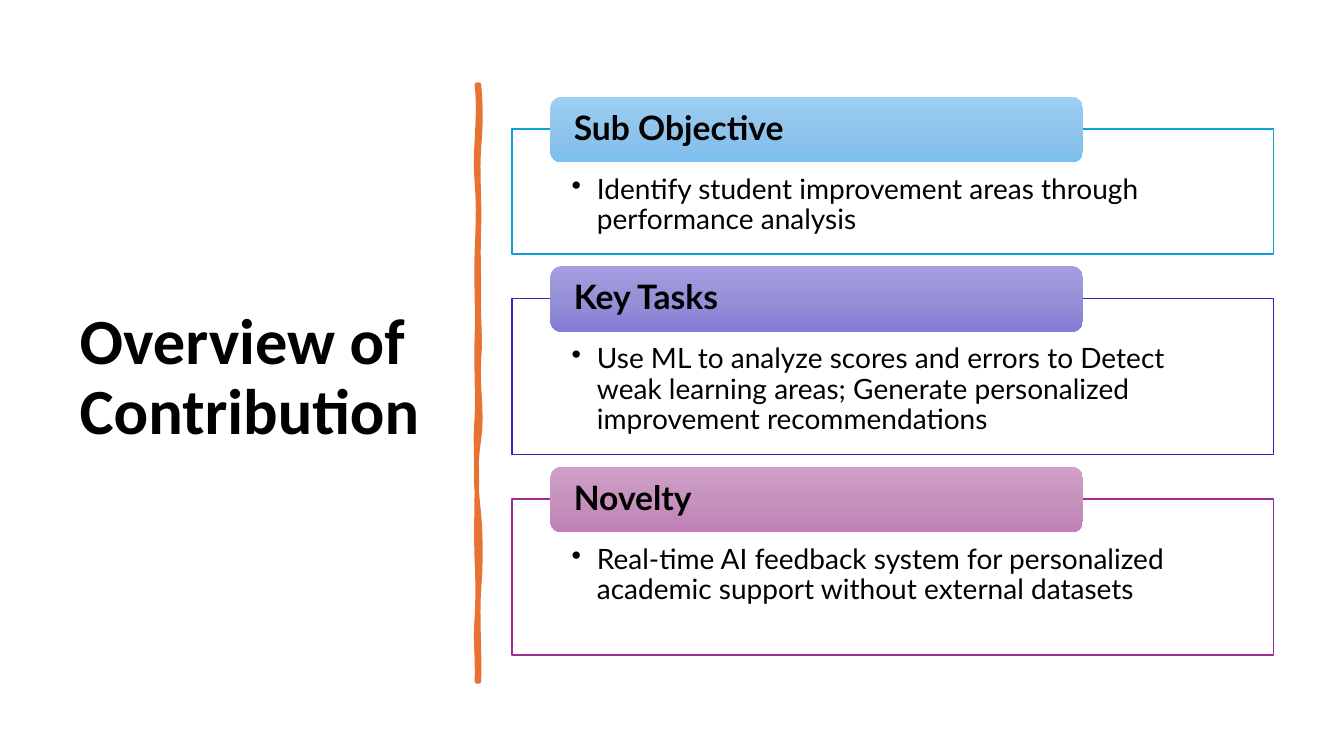
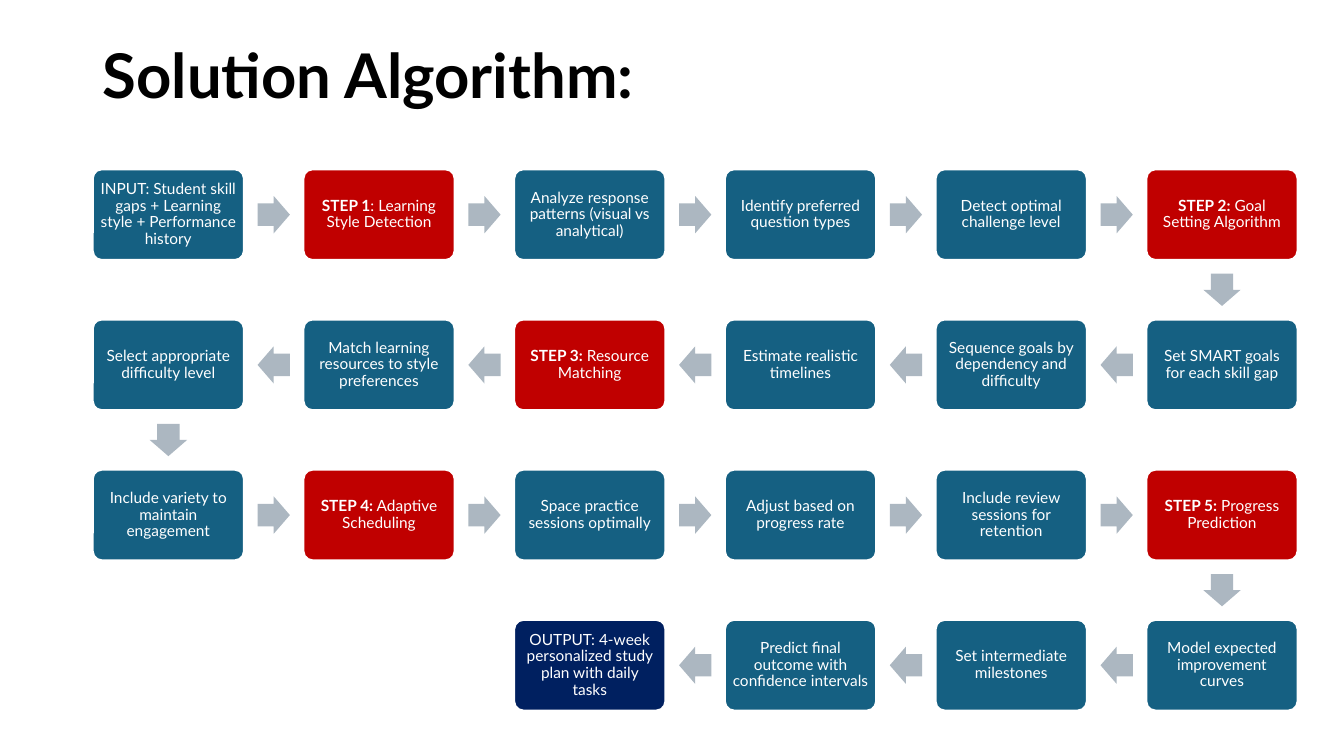
from copy import deepcopy

from pptx import Presentation
from pptx.dml.color import RGBColor
from pptx.enum.shapes import MSO_SHAPE
from pptx.enum.text import MSO_ANCHOR, MSO_AUTO_SIZE, PP_ALIGN
from pptx.oxml.ns import qn
from pptx.oxml.xmlchemy import OxmlElement
from pptx.util import Inches, Pt

RECT, ROUND_RECT = MSO_SHAPE.RECTANGLE, MSO_SHAPE.ROUNDED_RECTANGLE
RIGHT_ARROW = MSO_SHAPE.RIGHT_ARROW
TOP, MIDDLE = MSO_ANCHOR.TOP, MSO_ANCHOR.MIDDLE
LEFT, CENTER = PP_ALIGN.LEFT, PP_ALIGN.CENTER
NO_AUTOFIT = MSO_AUTO_SIZE.NONE

BLACK = RGBColor(0x00, 0x00, 0x00)
WHITE = RGBColor(0xFF, 0xFF, 0xFF)
ORANGE = RGBColor(0xE9, 0x71, 0x32)
TEAL = RGBColor(0x15, 0x60, 0x82)
RED = RGBColor(0xC0, 0x00, 0x00)
NAVY = RGBColor(0x00, 0x20, 0x60)
ARROW_GREY = RGBColor(0xAC, 0xB7, 0xC1)
SKY = [RGBColor.from_string(c) for c in ("0F9ED5", "9ECFF5", "90C4EB", "7CBEED")]
VIOLET = [RGBColor.from_string(c) for c in ("3C1EBA", "A39EE1", "9791D7", "837DD6")]
MAUVE = [RGBColor.from_string(c) for c in ("A02B93", "D0A0C8", "C693BD", "C17FB6")]

BODY_FONT, TITLE_FONT = "Lato", "Calibri"
LINE_SPACING = 0.9

# Heading, bullet, panel height, colours (border, then three tab shades)
CONTRIBUTIONS = [
    ("Sub Objective",
     "Identify student improvement areas through performance analysis", 1.24, SKY),
    ("Key Tasks",
     "Use ML to analyze scores and errors to Detect weak learning areas; "
     "Generate personalized improvement recommendations", 1.55, VIOLET),
    ("Novelty",
     "Real-time AI feedback system for personalized academic support "
     "without external datasets", 1.55, MAUVE),
]

# Steps in reading order: bold lead, remaining text, fill
ALGORITHM = [
    ("", "INPUT: Student skill gaps + Learning style + Performance history", TEAL),
    ("STEP 1", ": Learning Style Detection", RED),
    ("", "Analyze response patterns (visual vs analytical)", TEAL),
    ("", "Identify preferred question types", TEAL),
    ("", "Detect optimal challenge level", TEAL),
    ("STEP 2:", " Goal Setting Algorithm", RED),
    ("", "Set SMART goals for each skill gap", TEAL),
    ("", "Sequence goals by dependency and difficulty", TEAL),
    ("", "Estimate realistic timelines", TEAL),
    ("STEP 3:", " Resource Matching", RED),
    ("", "Match learning resources to style preferences", TEAL),
    ("", "Select appropriate difficulty level", TEAL),
    ("", "Include variety to maintain engagement", TEAL),
    ("STEP 4:", " Adaptive Scheduling", RED),
    ("", "Space practice sessions optimally", TEAL),
    ("", "Adjust based on progress rate", TEAL),
    ("", "Include review sessions for retention", TEAL),
    ("STEP 5:", " Progress Prediction", RED),
    ("", "Model expected improvement curves", TEAL),
    ("", "Set intermediate milestones", TEAL),
    ("", "Predict final outcome with confidence intervals", TEAL),
    ("", "OUTPUT: 4-week personalized study plan with daily tasks", NAVY),
]

# Hand-drawn divider: each curve is (control x, control x, end y)
DIVIDER_TOP, DIVIDER_LEFT, DIVIDER_RIGHT = 0.84, 4.73, 4.75
RIGHT_EDGE = [
    (4.77, 4.77, 1.46), (4.73, 4.76, 2.26), (4.74, 4.75, 2.94), (4.74, 4.77, 3.56),
    (4.73, 4.79, 4.36), (4.71, 4.72, 5.1), (4.77, 4.77, 5.84), (4.73, 4.76, 6.76),
]
LEFT_EDGE = [
    (4.74, 4.71, 6.13), (4.74, 4.74, 5.57), (4.72, 4.73, 4.77), (4.73, 4.71, 4.15),
    (4.74, 4.72, 3.35), (4.74, 4.72, 2.5), (4.74, 4.75, 1.81), (4.7, 4.77, 0.84),
]

PANEL_LEFT, PANEL_TOP, PANEL_WIDTH, PANEL_GAP = 5.08, 1.28, 7.55, 0.44
TAB_INDENT, TAB_RISE, TAB_WIDTH, TAB_HEIGHT = 0.38, 0.32, 5.28, 0.65

COLUMNS, STEP_WIDTH, STEP_HEIGHT = 6, 1.5, 0.9
FIRST_X, FIRST_Y, PITCH_X, PITCH_Y = 1.67, 2.13, 2.09, 1.49
ARROW_WIDTH, ARROW_HEIGHT = 0.32, 0.37


def add_title(slide, text, box, size, font, anchor):
    title = slide.shapes.title
    title.left, title.top, title.width, title.height = map(Inches, box)
    frame = title.text_frame
    frame.auto_size, frame.vertical_anchor = NO_AUTOFIT, anchor
    write(frame, [(text, True)], size, BLACK, LEFT, font)


def write(frame, runs, size, color, align=LEFT, font=BODY_FONT):
    """Fill the first paragraph with (text, bold) runs."""
    frame.word_wrap = True
    paragraph = frame.paragraphs[0]
    paragraph.alignment, paragraph.line_spacing = align, LINE_SPACING
    for text, bold in runs:
        run = paragraph.add_run()
        run.text = text
        run.font.name, run.font.size, run.font.bold = font, Pt(size), bold
        run.font.color.rgb = color
    return paragraph


def add_block(slide, kind, box, fill=None, border=None, border_width=1.0):
    block = slide.shapes.add_shape(kind, *map(Inches, box))
    block.shadow.inherit = False
    if fill is not None:
        block.fill.solid()
        block.fill.fore_color.rgb = fill
    if border is None:
        block.line.fill.background()
    else:
        block.line.color.rgb = border
        block.line.width = Pt(border_width)
    return block


def set_insets(frame, left, top, right, bottom):
    frame.margin_left, frame.margin_top = Inches(left), Inches(top)
    frame.margin_right, frame.margin_bottom = Inches(right), Inches(bottom)


def add_bullet(paragraph, indent):
    properties = paragraph._p.get_or_add_pPr()
    properties.set("marL", str(Inches(indent)))
    properties.set("indent", str(-Inches(indent)))
    bullet = OxmlElement("a:buChar")
    bullet.set("char", "•")
    properties.append(bullet)


def shade_downwards(block, colors):
    block.fill.gradient()
    stop_list = block._element.spPr.find(".//" + qn("a:gsLst"))
    stop_list.insert(1, deepcopy(stop_list[0]))
    block.fill.gradient_angle = 270
    for position, (stop, color) in enumerate(zip(block.fill.gradient_stops, colors)):
        stop.position = position / 2
        stop.color.rgb = color


def curve_points(start_x, start_y, curves, samples=8):
    """Sample cubic curves whose ends all lie at start_x."""
    points = []
    for control_1, control_2, end_y in curves:
        for i in range(1, samples + 1):
            t = i / samples
            x = (start_x + 3 * t * (1 - t) ** 2 * (control_1 - start_x)
                 + 3 * t ** 2 * (1 - t) * (control_2 - start_x))
            points.append((Inches(x), Inches(start_y + t * (end_y - start_y))))
        start_y = end_y
    return points


def add_divider(slide):
    bottom = RIGHT_EDGE[-1][-1]
    builder = slide.shapes.build_freeform(Inches(DIVIDER_RIGHT), Inches(DIVIDER_TOP))
    builder.add_line_segments(
        curve_points(DIVIDER_RIGHT, DIVIDER_TOP, RIGHT_EDGE)
        + [(Inches(DIVIDER_LEFT), Inches(bottom))]
        + curve_points(DIVIDER_LEFT, bottom, LEFT_EDGE), close=True)
    divider = builder.convert_to_shape()
    divider.shadow.inherit = False
    divider.fill.solid()
    divider.fill.fore_color.rgb = ORANGE
    divider.line.color.rgb = ORANGE
    divider.line.width = Pt(3.25)
    divider.line._get_or_add_ln().append(OxmlElement("a:round"))


def add_contribution(slide, top, heading, detail, height, colors):
    border, *shades = colors
    panel = add_block(slide, RECT, (PANEL_LEFT, top, PANEL_WIDTH, height), WHITE, border)
    panel.text_frame.vertical_anchor = TOP
    set_insets(panel.text_frame, 0.59, 0.46, 0.59, 0.16)
    add_bullet(write(panel.text_frame, [(detail, False)], 20, BLACK), 0.25)

    tab = add_block(slide, ROUND_RECT, (PANEL_LEFT + TAB_INDENT, top - TAB_RISE,
                                        TAB_WIDTH, TAB_HEIGHT))
    shade_downwards(tab, shades)
    tab.text_frame.vertical_anchor = MIDDLE
    set_insets(tab.text_frame, 0.2, 0, 0.2, 0)
    write(tab.text_frame, [(heading, True)], 24, BLACK)


def centred(x, y, width, height):
    return x - width / 2, y - height / 2, width, height


def step_centre(index):
    """Rows run alternately rightwards and leftwards."""
    row, column = divmod(index, COLUMNS)
    if row % 2:
        column = COLUMNS - 1 - column
    return FIRST_X + column * PITCH_X, FIRST_Y + row * PITCH_Y


def add_step(slide, centre, lead, rest, fill):
    step = add_block(slide, ROUND_RECT, centred(*centre, STEP_WIDTH, STEP_HEIGHT),
                     fill, WHITE, 1.5)
    step.adjustments[0] = 0.1
    step.text_frame.vertical_anchor = MIDDLE
    set_insets(step.text_frame, 0.05, 0.05, 0.05, 0.05)
    runs = [(lead, True), (rest, False)] if lead else [(rest, False)]
    write(step.text_frame, runs, 11, WHITE, CENTER)


def add_flow_arrow(slide, start, end):
    (x1, y1), (x2, y2) = start, end
    arrow = add_block(slide, RIGHT_ARROW, centred((x1 + x2) / 2, (y1 + y2) / 2,
                                                  ARROW_WIDTH, ARROW_HEIGHT), ARROW_GREY)
    arrow.adjustments[0], arrow.adjustments[1] = 0.6, 0.5
    arrow.rotation = 90 if y2 > y1 else 180 if x2 < x1 else 0


def build_overview(slide):
    add_title(slide, "Overview of Contribution", (0.69, 0.7, 3.74, 6.11),
              46, TITLE_FONT, MIDDLE)
    add_divider(slide)
    top = PANEL_TOP
    for heading, detail, height, colors in CONTRIBUTIONS:
        add_contribution(slide, top, heading, detail, height, colors)
        top += height + PANEL_GAP


def build_algorithm(slide):
    add_title(slide, "Solution Algorithm:", (0.92, 0.4, 11.5, 1.45),
              44, BODY_FONT, TOP)
    for index, step in enumerate(ALGORITHM):
        centre = step_centre(index)
        if index:
            add_flow_arrow(slide, step_centre(index - 1), centre)
        add_step(slide, centre, *step)


def main():
    deck = Presentation()
    deck.slide_width, deck.slide_height = Inches(13.33), Inches(7.5)
    title_only = deck.slide_layouts[5]
    for build in (build_overview, build_algorithm):
        build(deck.slides.add_slide(title_only))
    deck.save("out.pptx")


if __name__ == "__main__":
    main()
